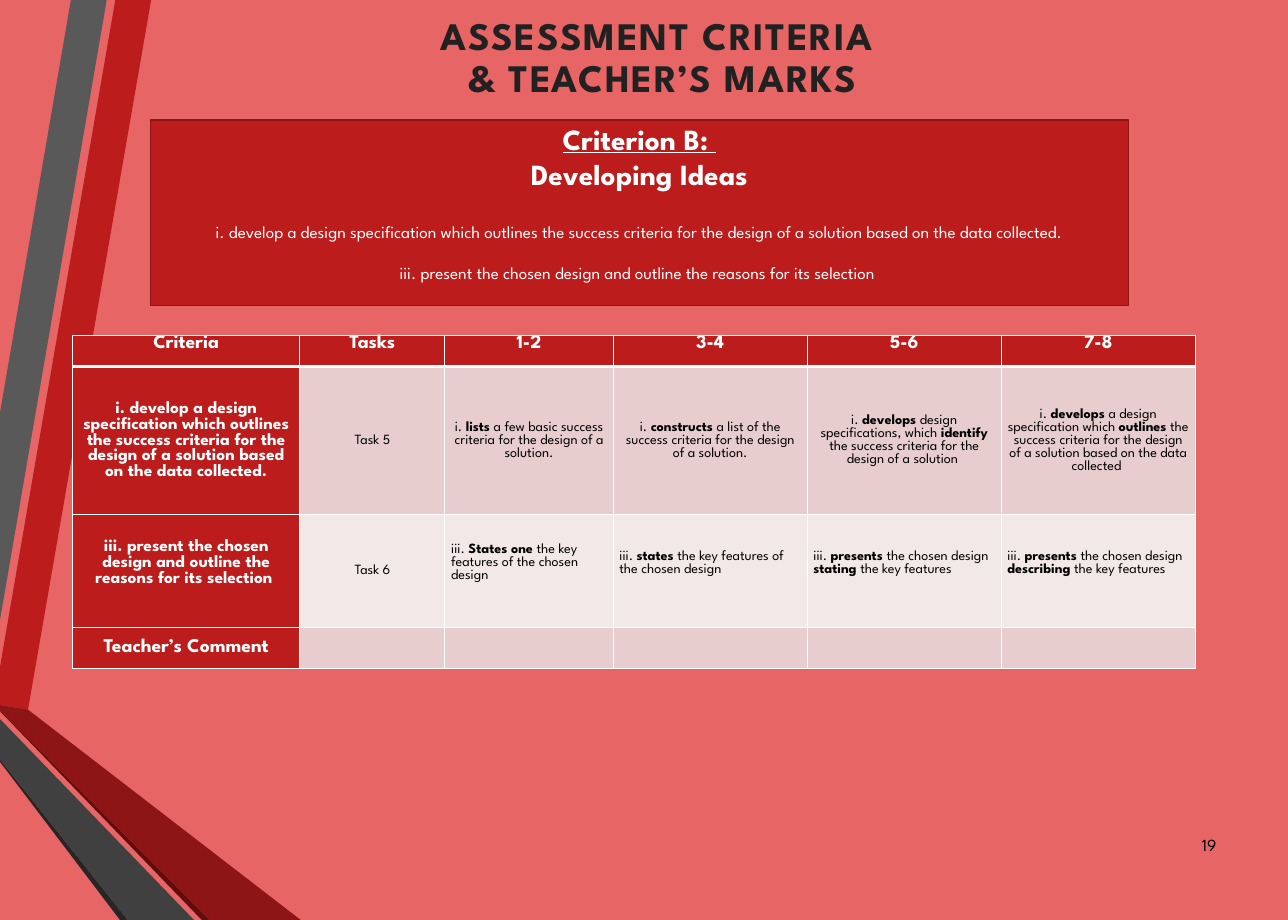
"""Build the Criterion B assessment slide."""
from lxml.etree import SubElement
from pptx import Presentation
from pptx.dml.color import RGBColor
from pptx.enum.shapes import MSO_SHAPE
from pptx.enum.text import MSO_ANCHOR, PP_ALIGN
from pptx.oxml.ns import qn
from pptx.util import Inches, Pt

FONT = "League Spartan"
CORAL = RGBColor(0xE8, 0x65, 0x65)
RED = RGBColor(0xBC, 0x1C, 0x1C)
BORDER_RED = RGBColor(0x8B, 0x15, 0x15)
DARK_RED = RGBColor(0x8D, 0x15, 0x15)
DEEP_RED = RGBColor(0x5E, 0x0E, 0x0E)
GREY = RGBColor(0x59, 0x59, 0x59)
DARK_GREY = RGBColor(0x40, 0x40, 0x40)
CHARCOAL = RGBColor(0x26, 0x26, 0x26)
TITLE_INK = RGBColor(0x21, 0x21, 0x21)
PINK = RGBColor(0xE7, 0xCD, 0xCD)
PALE_PINK = RGBColor(0xF3, 0xE8, 0xE8)
WHITE = RGBColor(0xFF, 0xFF, 0xFF)
BLACK = RGBColor(0, 0, 0)


def write(frame, text, size, color, bold=False, underline=False, align=PP_ALIGN.CENTER,
          line=1.0, before=0, tracking=0):
    """Add a paragraph; parts between asterisks are bold."""
    para = frame.paragraphs[0]
    if para.runs:
        para = frame.add_paragraph()
    para.alignment = align
    para.line_spacing = line
    para.space_before = Pt(before)
    for index, part in enumerate(text.split("*")):
        span = para.add_run()
        span.text = part
        span.font.name = FONT
        span.font.size = Pt(size)
        span.font.color.rgb = color
        span.font.bold = bold or index % 2 == 1
        span.font.underline = underline
        if tracking:
            span.font._element.set("spc", str(round(tracking * 100)))


def add_text_box(left, top, width, height, anchor, side=0.1, top_inset=0.05):
    """Add a wrapping text box and return its text frame."""
    box = page.shapes.add_textbox(Inches(left), Inches(top), Inches(width), Inches(height))
    frame = box.text_frame
    frame.word_wrap = True
    frame.vertical_anchor = anchor
    frame.margin_left = frame.margin_right = Inches(side)
    frame.margin_top = frame.margin_bottom = Inches(top_inset)
    return frame


deck = Presentation()
deck.slide_width = Inches(16.53)
deck.slide_height = Inches(11.81)
page = deck.slides.add_slide(deck.slide_layouts[6])
page.background.fill.solid()
page.background.fill.fore_color.rgb = CORAL

ribbons = [
    (RED, [(0, 8.56), (0, 9.05), (0.36, 9.11), (1.94, 0), (1.48, 0)]),
    (GREY, [(1.37, 0), (0.91, 0), (0, 5.3), (0, 7.96)]),
    (CHARCOAL, [(0, 9.75), (0, 9.78), (1.54, 11.81), (1.64, 11.81)]),
    (DEEP_RED, [(0, 9.12), (0, 9.13), (2.59, 11.81), (2.69, 11.81)]),
    (DARK_RED, [(0, 9.12), (2.69, 11.81), (3.86, 11.81), (0.36, 9.11), (0, 9.05)]),
    (DARK_GREY, [(0, 9.75), (1.64, 11.81), (2.49, 11.81), (0, 9.23)]),
]
for color, corners in ribbons:
    points = [(Inches(x), Inches(y)) for x, y in corners]
    outline = page.shapes.build_freeform(*points[0])
    outline.add_line_segments(points[1:], close=True)
    ribbon = outline.convert_to_shape()
    ribbon.shadow.inherit = False
    ribbon.fill.solid()
    ribbon.fill.fore_color.rgb = color
    ribbon.line.fill.background()

number = add_text_box(14.96, 10.53, 0.75, 0.63, MSO_ANCHOR.MIDDLE)
write(number, "19", 15.7, BLACK, align=PP_ALIGN.RIGHT)

title = add_text_box(1.93, 0.14, 13.15, 1.88, MSO_ANCHOR.TOP, side=0.15, top_inset=0.07)
for text in ("ASSESSMENT CRITERIA ", "& TEACHER’S MARKS"):
    write(title, text, 36, TITLE_INK, bold=True, line=0.9, tracking=1.5)

column_widths = [2.92, 1.86, 2.16, 2.49, 2.49, 2.49]
row_heights = [0.41, 1.9, 1.45, 0.52]
row_fills = [RED, PINK, PALE_PINK, PINK]
label_sizes = [18, 16, 16, 18]
rows = [
    ["Criteria", "Tasks", "1-2", "3-4", "5-6", "7-8"],
    ["i. develop a design specification which outlines the success criteria for the design "
     "of a solution based on the data collected.",
     "Task 5",
     "i. *lists *a few basic success criteria for the design of a solution.",
     "i. *constructs *a list of the success criteria for the design of a solution.",
     "i. *develops *design specifications, which *identify *the success criteria for the "
     "design of a solution ",
     "i. *develops *a design specification which *outlines *the success criteria for the "
     "design of a solution based on the data collected "],
    ["iii. present the chosen design and outline the reasons for its selection ",
     "Task 6",
     "iii. *States one *the key features of the chosen design",
     "iii. *states *the key features of the chosen design",
     "iii. *presents *the chosen design *stating *the key features",
     "iii. *presents *the chosen design *describing *the key features"],
    ["Teacher’s Comment", "", "", "", "", ""],
]
table = page.shapes.add_table(len(rows), len(column_widths), Inches(0.93), Inches(4.3),
                              Inches(sum(column_widths)), Inches(sum(row_heights))).table
for column, width in zip(table.columns, column_widths):
    column.width = Inches(width)
for r, texts in enumerate(rows):
    table.rows[r].height = Inches(row_heights[r])
    for c, text in enumerate(texts):
        cell = table.cell(r, c)
        is_label = r == 0 or c == 0
        is_feature = r == 2 and c > 1
        cell.margin_left = cell.margin_right = Inches(0.08)
        cell.margin_top = 0
        cell.margin_bottom = Inches(0.2 if r == 2 and c != 1 else 0)
        cell.vertical_anchor = MSO_ANCHOR.TOP if r == 0 else MSO_ANCHOR.MIDDLE
        properties = cell._tc.get_or_add_tcPr()
        for side in ("lnL", "lnR", "lnT", "lnB"):
            heavy = (r, side) in ((0, "lnB"), (1, "lnT"))
            border = SubElement(properties, qn(f"a:{side}"), w=str(Pt(3 if heavy else 1)))
            paint = SubElement(border, qn("a:solidFill"))
            SubElement(paint, qn("a:srgbClr"), val=str(WHITE))
        cell.fill.solid()
        cell.fill.fore_color.rgb = RED if is_label else row_fills[r]
        if text:
            write(cell.text_frame, text, label_sizes[r] if is_label else 13,
                  WHITE if is_label else BLACK, bold=is_label,
                  align=PP_ALIGN.LEFT if is_feature else PP_ALIGN.CENTER)

banner = page.shapes.add_shape(MSO_SHAPE.RECTANGLE, Inches(1.93), Inches(1.54),
                               Inches(12.55), Inches(2.38))
banner.shadow.inherit = False
banner.fill.solid()
banner.fill.fore_color.rgb = RED
banner.line.color.rgb = BORDER_RED
banner.line.width = Pt(1.25)
criterion = banner.text_frame
criterion.word_wrap = True
criterion.vertical_anchor = MSO_ANCHOR.MIDDLE
criterion.margin_bottom = Inches(0.32)
write(criterion, "Criterion B: ", 27, WHITE, bold=True, underline=True)
write(criterion, "Developing Ideas", 27, WHITE, bold=True)
write(criterion, rows[1][0], 15.7, WHITE, before=27.5)
write(criterion, rows[2][0], 15.7, WHITE, before=19)

deck.save("out.pptx")
